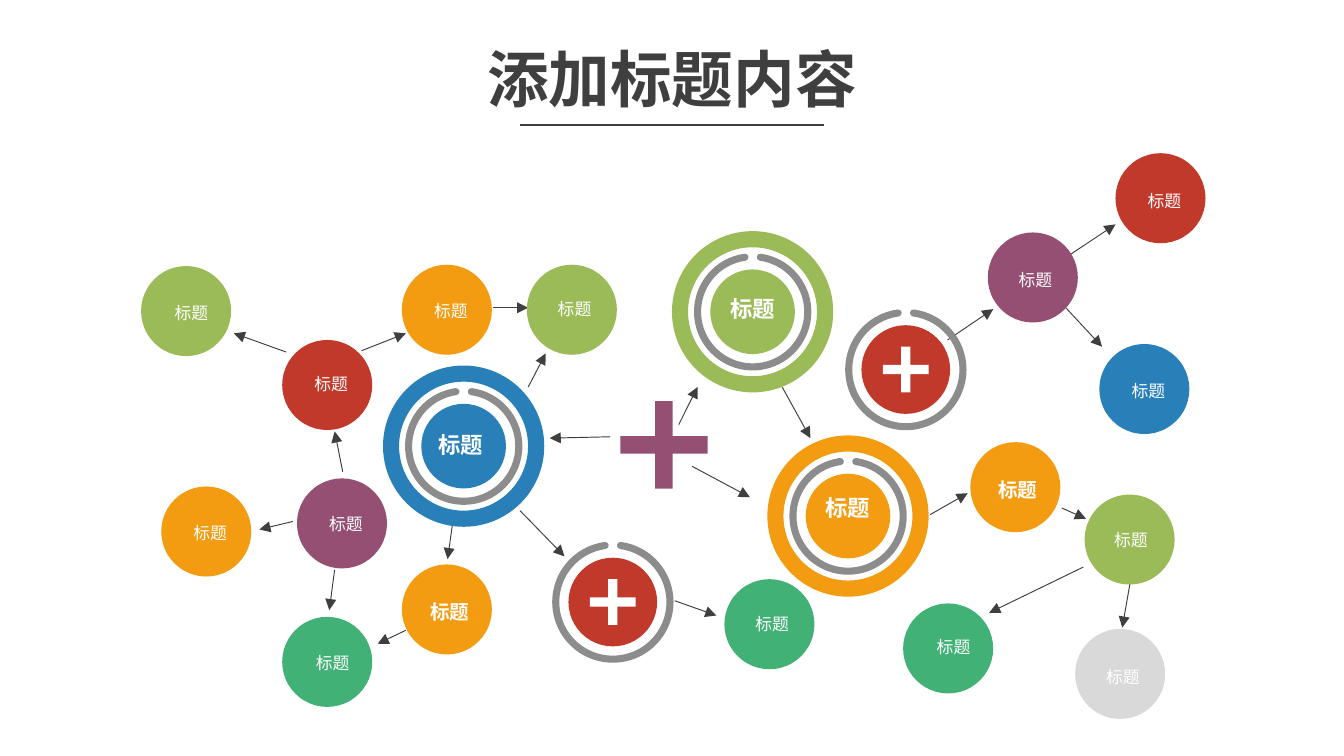
import math
from lxml import etree
from pptx import Presentation
from pptx import util as u
from pptx.dml.color import RGBColor
from pptx.enum import shapes, text
from pptx.oxml.ns import qn

SCALE = 9144  # EMU per px, 100 px to the inch


class Theme:
    font = "Arial"
    ink, white, gray, pale = "3F3F3F", "FFFFFF", "8C8C8C", "D9D9D9"
    red, blue, lime = "C0392B", "2980B9", "9BBB59"
    amber, teal, plum = "F39C12", "41B176", "954F72"
    head, big, mid, small = 33, 12, 10.5, 9
    rule, thin, hoop = 1, 0.5, 3.8


T = Theme
TITLE = "添加标题内容"
LABEL = "标题"

ARROWS = [  # x1, y1, x2, y2
    (705, 253, 739, 230), (797, 189, 830, 167), (793, 229, 820, 258),
    (505, 316, 519, 288), (692, 383, 720, 367), (790, 378, 808, 386),
    (806, 422, 736, 456), (841, 433, 835, 467), (515, 347, 558, 370),
    (454, 325, 409, 326), (502, 447, 533, 458), (582, 288, 603, 326),
    (337, 388, 333, 416), (387, 380, 420, 414), (249, 424, 245, 454),
    (218, 388, 193, 394), (302, 469, 281, 479), (213, 262, 174, 248),
    (255, 351, 249, 321), (393, 288, 406, 263), (367, 229, 393, 229),
    (269, 261, 302, 248),
]
NODE = 67
NODES = [  # left, top, colour, label shift right, label shift down, label size
    (830, 114, T.red, 3, 2, T.small),
    (735, 173, T.plum, 2, 2, T.small),
    (818, 256, T.blue, 3, 1, T.small),
    (807, 368, T.lime, 1, 0, T.small),
    (722, 329, T.amber, 2, 2, T.mid),
    (672, 449, T.teal, 4, -1, T.small),
    (299, 197, T.amber, 3, 1, T.small),
    (800, 468, T.pale, 2, 2, T.small),
    (392, 197, T.lime, 2, -1, T.small),
    (210, 253, T.red, 3, -1, T.small),
    (105, 198, T.lime, 4, 1, T.small),
    (120, 362, T.amber, 3, 1, T.small),
    (221, 356, T.plum, 3, 0, T.small),
    (299, 420, T.amber, 2, 2, T.mid),
    (210, 459, T.teal, 4, 1, T.small),
    (539, 431, T.teal, 2, 0, T.small),
]
HUBS = [  # centre, colour, label shift right and down
    (560, 232, T.lime, 0, -2),
    (345, 332, T.blue, -2, -1),
    (631, 384, T.amber, 0, -6),
]
PLUSES = [(456, 448), (674, 275)]


def px(n):
    return u.Emu(round(n * SCALE))


def place(slide, kind, x, y, size):
    """Add a square shape around the centre x, y."""
    shape = slide.shapes.add_shape(
        kind, px(x - size / 2), px(y - size / 2), px(size), px(size))
    shape.shadow.inherit = False
    return shape


def solid(slide, kind, x, y, size, color):
    shape = place(slide, kind, x, y, size)
    shape.fill.solid()
    shape.fill.fore_color.rgb = RGBColor.from_string(color)
    shape.line.fill.background()
    return shape


def disc(slide, x, y, size, color):
    return solid(slide, shapes.MSO_SHAPE.OVAL, x, y, size, color)


def plus(slide, x, y, size, color):
    solid(slide, shapes.MSO_SHAPE.CROSS, x, y, size, color).adjustments[0] = 0.4


def hoop(slide, x, y, size):
    """Add a thin ring, open at the top, with round ends."""
    gap = math.degrees(math.asin(5.7 / (size / 2)))
    arc = place(slide, shapes.MSO_SHAPE.ARC, x, y, size)
    for i, turn in enumerate((270 + gap, 270 - gap)):
        arc.adjustments[i] = turn * 0.6  # degrees in units of 100000 / 60000
    arc.fill.background()
    arc.line.width = u.Pt(T.hoop)
    arc.line.color.rgb = RGBColor.from_string(T.gray)
    arc.line._get_or_add_ln().set("cap", "rnd")


def line(slide, x1, y1, x2, y2, width, arrow=False):
    wire = slide.shapes.add_connector(
        shapes.MSO_CONNECTOR.STRAIGHT, px(x1), px(y1), px(x2), px(y2))
    wire.line.width = u.Pt(width)
    wire.line.color.rgb = RGBColor.from_string(T.ink)
    if arrow:
        etree.SubElement(wire.line._get_or_add_ln(), qn("a:tailEnd"), type="triangle")
    etree.SubElement(wire._element.spPr, qn("a:effectLst"))


def write(frame, words, size, color, bold):
    frame.text = words
    frame.vertical_anchor = text.MSO_ANCHOR.MIDDLE
    para = frame.paragraphs[0]
    para.alignment = text.PP_ALIGN.CENTER
    font = para.runs[0].font
    font.name, font.size, font.bold = T.font, u.Pt(size), bold
    font.color.rgb = RGBColor.from_string(color)


def label(shape, right, down, size):
    """Write the label, moved off the centre by uneven margins."""
    frame = shape.text_frame
    write(frame, LABEL, size, T.white, size != T.small)
    frame.word_wrap = False
    frame.margin_left, frame.margin_right = px(max(0, 2 * right)), px(max(0, -2 * right))
    frame.margin_top, frame.margin_bottom = px(max(0, 2 * down)), px(max(0, -2 * down))


def head(slide):
    title = slide.shapes.title
    title.left, title.top, title.width, title.height = map(px, (69, 30, 862, 63))
    write(title.text_frame, TITLE, T.head, T.ink, True)
    title.text_frame.paragraphs[0].line_spacing = 0.9
    line(slide, 387, 93, 613, 93, T.rule)


def main():
    deck = Presentation()
    deck.slide_width, deck.slide_height = px(1000), px(562.5)
    slide = deck.slides.add_slide(deck.slide_layouts[5])
    head(slide)
    for ends in ARROWS:
        line(slide, *ends, T.thin, arrow=True)
    for x, y, color, right, down, size in NODES:
        node = disc(slide, x + NODE / 2, y + NODE / 2, NODE, color)
        label(node, right, down, size)
    for x, y, color, right, down in HUBS:
        label(disc(slide, x, y, 63, color), right, down, T.big)
        ring = solid(slide, shapes.MSO_SHAPE.DONUT, x, y, 120, color)
        ring.adjustments[0] = 0.1
        hoop(slide, x, y, 82)
    for x, y in PLUSES:
        disc(slide, x, y, 66, T.red)
        hoop(slide, x, y, 85)
        plus(slide, x, y, 34, T.white)
    plus(slide, 494, 331, 65, T.plum)
    deck.save("out.pptx")


if __name__ == "__main__":
    main()
